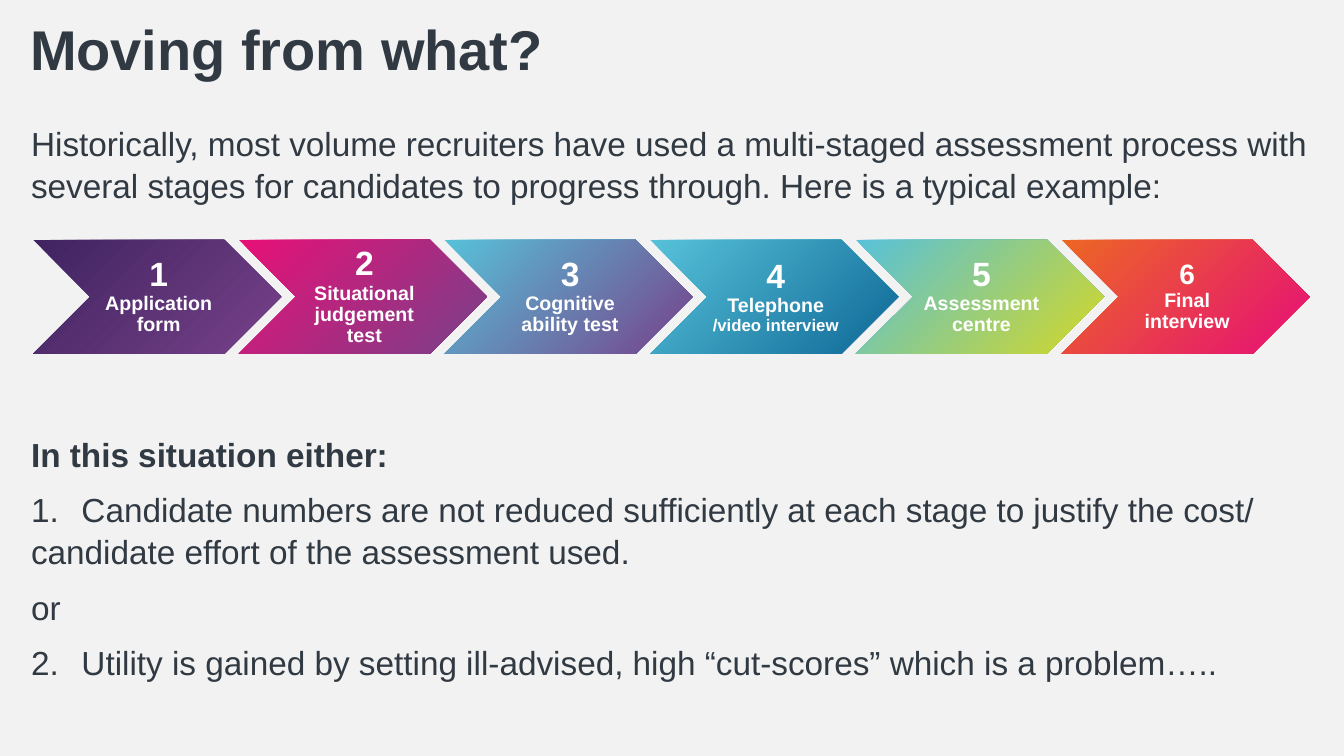
from lxml.etree import SubElement
from pptx import Presentation
from pptx.dml.color import RGBColor
from pptx.enum.shapes import MSO_SHAPE
from pptx.enum.text import MSO_ANCHOR, PP_ALIGN
from pptx.oxml.ns import qn
from pptx.util import Inches, Pt

BACKGROUND = RGBColor(0xF2, 0xF2, 0xF2)
SLATE = RGBColor(0x31, 0x3A, 0x43)
WHITE = RGBColor(0xFF, 0xFF, 0xFF)
PURPLE = RGBColor(0x77, 0x41, 0x89)
INDIGO = RGBColor(0x41, 0x24, 0x61)
MAGENTA = RGBColor(0xE6, 0x11, 0x77)
SKY = RGBColor(0x57, 0xC1, 0xD9)
BLUE = RGBColor(0x0E, 0x68, 0x96)
LIME = RGBColor(0xD1, 0xD7, 0x2C)
ORANGE = RGBColor(0xEC, 0x66, 0x24)

BODY_SIZE = 23.8


def add_line(frame, text, size=BODY_SIZE, color=SLATE, bold=False,
             align=PP_ALIGN.LEFT, spacing=1.04, before=0):
    """Fill the frame's empty first paragraph, or append a new one."""
    first = frame.paragraphs[0]
    paragraph = frame.add_paragraph() if first.text else first
    paragraph.text = text
    paragraph.alignment = align
    paragraph.line_spacing = spacing
    paragraph.space_before = Pt(before)
    for run in paragraph.runs:
        run.font.name = "Arial"
        run.font.size = Pt(size)
        run.font.bold = bold
        run.font.color.rgb = color


def add_frame(slide, left, top, width, height):
    frame = slide.shapes.add_textbox(
        Inches(left), Inches(top), Inches(width), Inches(height)).text_frame
    frame.word_wrap = True
    return frame


presentation = Presentation()
presentation.slide_width = Inches(13.33)
presentation.slide_height = Inches(7.5)
slide = presentation.slides.add_slide(presentation.slide_layouts[6])
slide.background.fill.solid()
slide.background.fill.fore_color.rgb = BACKGROUND

title = add_frame(slide, 0.2, 0.16, 12.93, 0.72)
title.vertical_anchor = MSO_ANCHOR.MIDDLE
add_line(title, "Moving from what?", size=40, bold=True, spacing=0.9)

introduction = add_frame(slide, 0.21, 1.16, 12.91, 1)
add_line(introduction, "Historically, most volume recruiters have used a "
         "multi-staged assessment process with several stages for candidates "
         "to progress through. Here is a typical example:")

# Stage lines with their sizes, gradient colours, last stop, corner-centred or not
stages = [
    ([("1", 24), ("Application form", 14)], PURPLE, INDIGO, 0.99, True),
    ([("2", 24), ("Situational judgement test", 14)], PURPLE, MAGENTA, 0.99, True),
    ([("3", 24), ("Cognitive ability test", 14)], SKY, PURPLE, 1, False),
    ([("4", 24), ("Telephone", 14), ("/video interview", 12)], SKY, BLUE, 1, False),
    ([("5", 24), ("Assessment centre", 14)], SKY, LIME, 0.97, False),
    ([("6", 20), ("Final interview", 14)], ORANGE, MAGENTA, 0.98, False),
]
for index, (lines, start, end, last_stop, from_corner) in enumerate(stages):
    stage = slide.shapes.add_shape(
        MSO_SHAPE.CHEVRON, Inches(0.33 + 2.04 * index), Inches(2.38),
        Inches(2.46), Inches(1.13))
    stage.shadow.inherit = False
    stage.line.fill.background()
    stage.fill.gradient()
    stage.fill.gradient_angle = 315
    first_stop, final_stop = stage.fill.gradient_stops
    first_stop.color.rgb, first_stop.position = start, 0
    final_stop.color.rgb, final_stop.position = end, last_stop
    if from_corner:
        gradient = stage.element.spPr.find(qn("a:gradFill"))
        gradient.remove(gradient.find(qn("a:lin")))
        circle = SubElement(gradient, qn("a:path"), path="circle")
        SubElement(circle, qn("a:fillToRect"), l="100000", t="100000")

    label = stage.text_frame
    label.word_wrap = True
    label.vertical_anchor = MSO_ANCHOR.MIDDLE
    label.margin_left = label.margin_top = label.margin_bottom = Inches(0.03)
    label.margin_right = 0
    for text, size in lines:
        add_line(label, text, size=size, color=WHITE, bold=True,
                 align=PP_ALIGN.CENTER, spacing=0.9)

situation = add_frame(slide, 0.21, 4.24, 12.91, 2.54)
add_line(situation, "In this situation either:", bold=True)
for text in (
    "1.\tCandidate numbers are not reduced sufficiently at each stage to "
    "justify the cost/\vcandidate effort of the assessment used.",
    "or",
    "2.\tUtility is gained by setting ill-advised, high “cut-scores” which "
    "is a problem…..",
):
    add_line(situation, text, before=10)

presentation.save("out.pptx")
